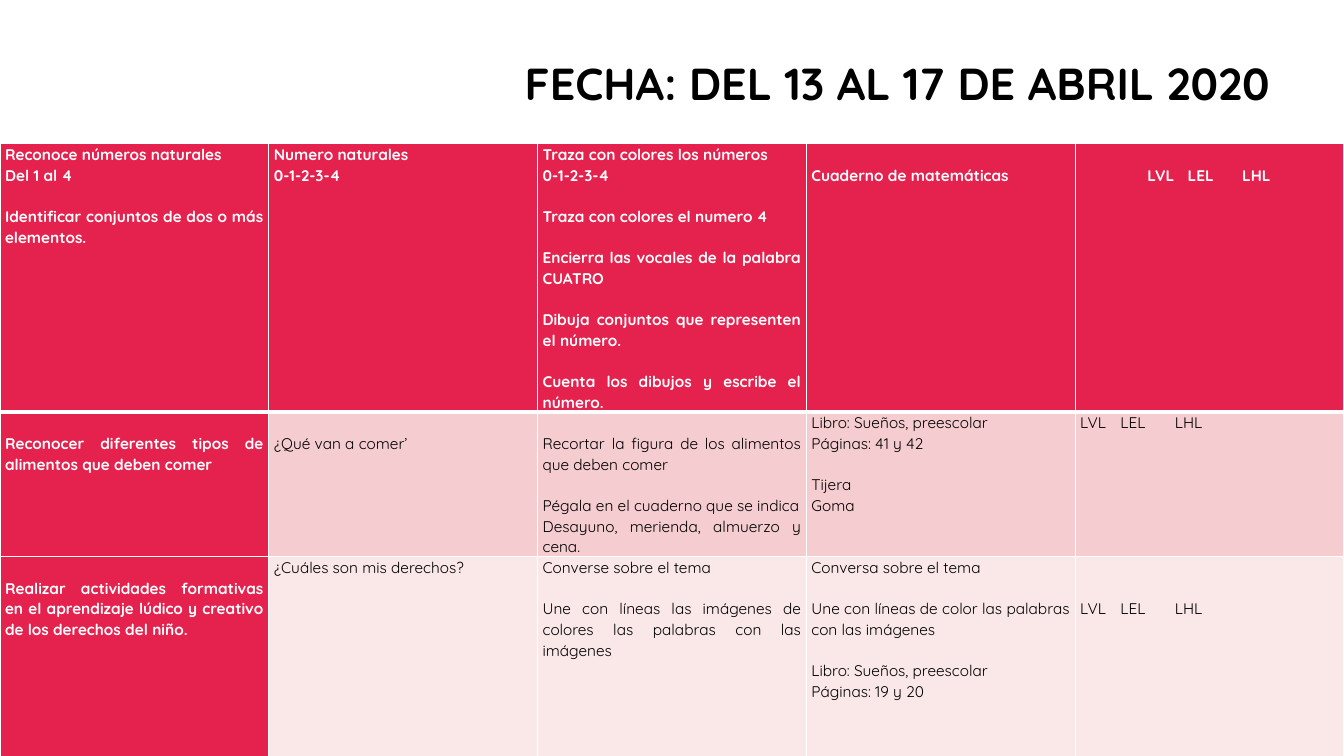
from dataclasses import dataclass

from lxml import etree
from pptx import Presentation, util as u
from pptx.dml.color import RGBColor
from pptx.enum import text
from pptx.oxml import ns

W, H = u.Inches(13.33), u.Inches(7.5)
FONT = "Quicksand"
COLORS = {
    "red": "E5224E",
    "rose": "F5CDD0",
    "blush": "FAE8E9",
    "white": "FFFFFF",
    "black": "000000",
}
LINE = u.Pt(14.7)  # one line of table text
SIDE = u.Inches(0.05)
LEVELS = "LVL\tLEL\tLHL"
LEVEL_TABS = (u.Inches(0.4), u.Inches(0.94))


@dataclass
class Entry:
    """Groups of lines, set one line apart, starting `skip` lines down."""
    groups: list[list[str]]
    skip: int = 0
    indent: float = 0  # share of the column width


@dataclass
class Row:
    height: float  # share of the slide height
    fill: str
    entries: list[Entry]
    top_border: float = 1
    bottom_border: float = 1


ROWS = [
    Row(0.355, "red", [
        Entry([["Reconoce números naturales", "Del 1 al 4"],
               ["Identificar conjuntos de dos o más elementos."]]),
        Entry([["Numero naturales", "0-1-2-3-4"]]),
        Entry([["Traza con colores los números", "0-1-2-3-4"],
               ["Traza con colores el numero 4"],
               ["Encierra las vocales de la palabra CUATRO"],
               ["Dibuja conjuntos que representen el número."],
               ["Cuenta los dibujos y escribe el número."]]),
        Entry([["Cuaderno de matemáticas"]], skip=1),
        Entry([[LEVELS]], skip=1, indent=0.25),
    ], bottom_border=3),
    Row(0.19, "rose", [
        Entry([["Reconocer diferentes tipos de alimentos que deben comer"]], skip=1),
        Entry([["¿Qué van a comer’"]], skip=1),
        Entry([["Recortar la figura de los alimentos que deben comer"],
               ["Pégala en el cuaderno que se indica",
                "Desayuno, merienda, almuerzo y cena."]], skip=1),
        Entry([["Libro: Sueños, preescolar", "Páginas: 41 y 42"],
               ["Tijera", "Goma"]]),
        Entry([[LEVELS]]),
    ], top_border=3),
    Row(0.265, "blush", [
        Entry([["Realizar actividades formativas en el aprendizaje lúdico "
                "y creativo de los derechos del niño."]], skip=1),
        Entry([["¿Cuáles son mis derechos?"]]),
        Entry([["Converse sobre el tema"],
               ["Une con líneas las imágenes de colores las palabras con las imágenes"]]),
        Entry([["Conversa sobre el tema"],
               ["Une con líneas de color las palabras con las imágenes"],
               ["Libro: Sueños, preescolar", "Páginas: 19 y 20"]]),
        Entry([[LEVELS]], skip=2),
    ]),
]


def color(name: str) -> RGBColor:
    return RGBColor.from_string(COLORS[name])


def style_font(p, size: float, name: str, bold: bool) -> None:
    for r in p.runs:
        r.font.name, r.font.size, r.font.bold = FONT, u.Pt(size), bold
        r.font.color.rgb = color(name)


def add_tabs(p) -> None:
    tabs = etree.SubElement(p._p.get_or_add_pPr(), ns.qn("a:tabLst"))
    for position in LEVEL_TABS:
        etree.SubElement(tabs, ns.qn("a:tab"), pos=str(position), algn="l")


def add_borders(cell, row: Row) -> None:
    widths = {"lnL": 1, "lnR": 1, "lnT": row.top_border, "lnB": row.bottom_border}
    for side, width in widths.items():
        line = etree.SubElement(cell._tc.get_or_add_tcPr(), ns.qn(f"a:{side}"),
                                w=str(u.Pt(width)))
        fill = etree.SubElement(line, ns.qn("a:solidFill"))
        etree.SubElement(fill, ns.qn("a:srgbClr"), val=COLORS["white"])


def fill_cell(cell, entry: Entry, row: Row, fill: str, column_width: int) -> None:
    add_borders(cell, row)
    cell.fill.solid()
    cell.fill.fore_color.rgb = color(fill)
    cell.margin_left = SIDE + int(entry.indent * column_width)
    cell.margin_right = SIDE
    cell.margin_top, cell.margin_bottom = LINE * entry.skip, 0

    tf = cell.text_frame
    lines = [(line, g > 0 and i == 0)
             for g, group in enumerate(entry.groups) for i, line in enumerate(group)]
    tf.text = "\n".join(line for line, _ in lines)
    on_red = fill == "red"
    for p, (line, starts_group) in zip(tf.paragraphs, lines):
        p.line_spacing = 1.07
        if starts_group:
            p.space_before = LINE
        if line == LEVELS:
            p.alignment = text.PP_ALIGN.LEFT
            add_tabs(p)
        else:
            p.alignment = text.PP_ALIGN.JUSTIFY
        style_font(p, 11, "white" if on_red else "black", on_red)


def add_plan(s) -> None:
    columns = len(ROWS[0].entries)
    column_width = W // columns
    height = int(H * sum(row.height for row in ROWS))
    table = s.shapes.add_table(len(ROWS), columns, 0, H - height, W, height).table
    for r, row in enumerate(ROWS):
        table.rows[r].height = int(H * row.height)
        for c, entry in enumerate(row.entries):
            # The first column is a header column
            fill = "red" if c == 0 else row.fill
            fill_cell(table.cell(r, c), entry, row, fill, column_width)


def add_title(s) -> None:
    sp = s.shapes.add_textbox(int(W * 0.289), int(H * 0.075), int(W * 0.767), int(H * 0.09))
    tf = sp.text_frame
    tf.word_wrap = True
    tf.text = "FECHA: DEL 13 AL 17 DE ABRIL 2020 "
    p = tf.paragraphs[0]
    p.alignment, p.line_spacing = text.PP_ALIGN.CENTER, 0.9
    style_font(p, 32, "black", True)


def main() -> None:
    prs = Presentation()
    prs.slide_width, prs.slide_height = W, H
    s = prs.slides.add_slide(prs.slide_layouts[6])
    # Weekly plan, then its date
    add_plan(s)
    add_title(s)
    prs.save("out.pptx")


if __name__ == "__main__":
    main()
